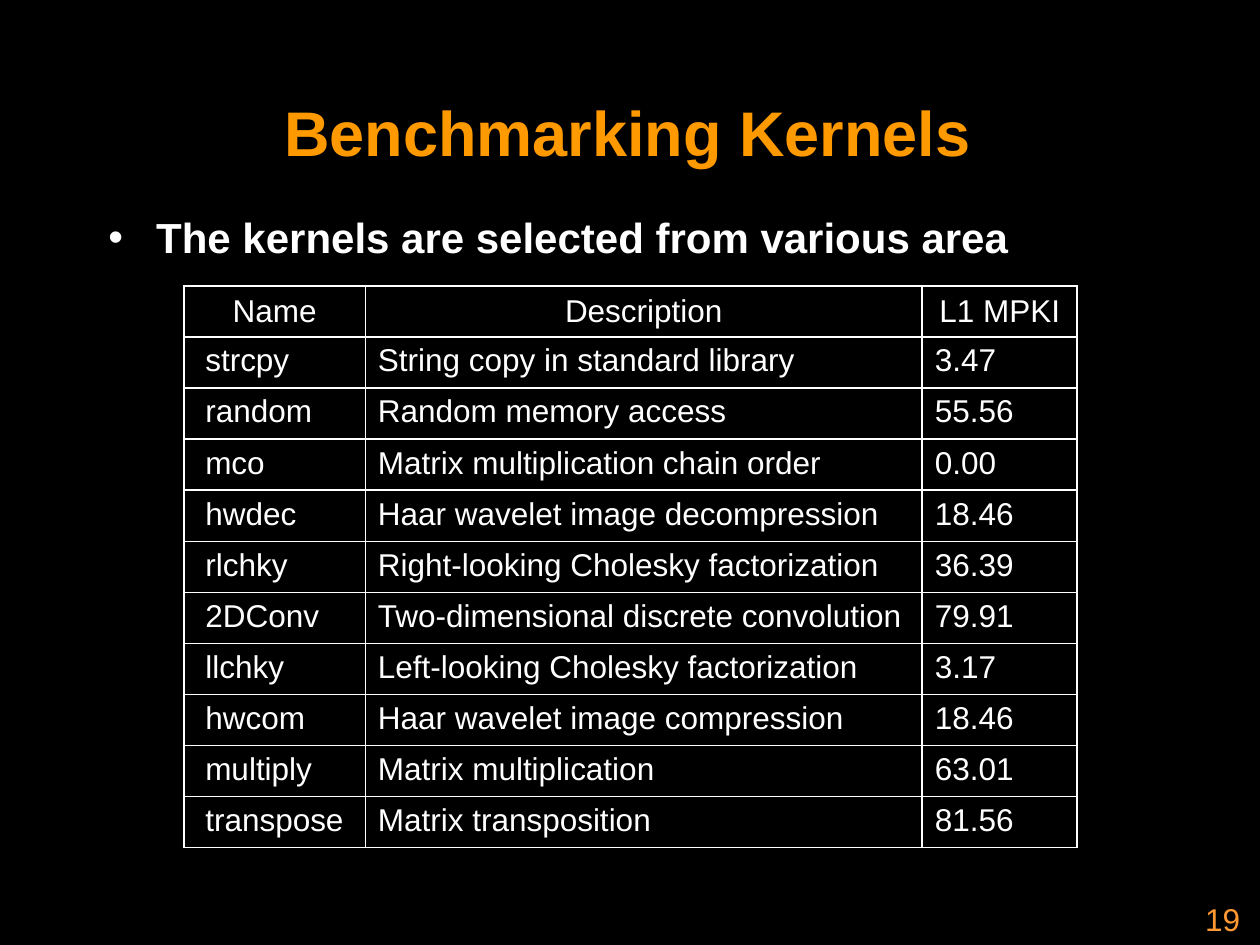
from lxml import etree
from pptx import Presentation
from pptx.dml.color import RGBColor
from pptx.enum.text import MSO_ANCHOR, PP_ALIGN
from pptx.oxml import parse_xml
from pptx.oxml.ns import nsdecls, qn
from pptx.util import Inches, Pt

MID, TOP = MSO_ANCHOR.MIDDLE, MSO_ANCHOR.TOP
LEFT, MIDST, RIGHT = PP_ALIGN.LEFT, PP_ALIGN.CENTER, PP_ALIGN.RIGHT
BLACK = RGBColor(0, 0, 0)
WHITE = RGBColor(255, 255, 255)
GOLD = RGBColor(255, 153, 0)
AMBER = RGBColor(255, 153, 51)
WIDTHS = [1.44, 4.42, 1.23]
ROW = 0.4055
ROWS = [
    ("Name", "Description", "L1 MPKI"),
    ("strcpy", "String copy in standard library", "3.47"),
    ("random", "Random memory access", "55.56"),
    ("mco", "Matrix multiplication chain order", "0.00"),
    ("hwdec", "Haar wavelet image decompression", "18.46"),
    ("rlchky", "Right-looking Cholesky factorization", "36.39"),
    ("2DConv", "Two-dimensional discrete convolution", "79.91"),
    ("llchky", "Left-looking Cholesky factorization", "3.17"),
    ("hwcom", "Haar wavelet image compression", "18.46"),
    ("multiply", "Matrix multiplication", "63.01"),
    ("transpose", "Matrix transposition", "81.56"),
]


def write(frame, text, size, color, align, bold=False):
    frame.word_wrap = True
    para = frame.paragraphs[0]
    para.text, para.alignment = text, align
    font = para.font
    font.name, font.size, font.bold = "Arial", Pt(size), bold
    font.color.rgb = color
    return para


def place(shape, *box):
    shape.left, shape.top, shape.width, shape.height = map(Inches, box)


deck = Presentation()
deck.slide_width, deck.slide_height = Inches(10), Inches(7.5)
slide = deck.slides.add_slide(deck.slide_layouts[1])
slide.background.fill.solid()
slide.background.fill.fore_color.rgb = BLACK

title, body = slide.placeholders
place(title, 0.73, 0.58, 8.5, 0.93)
write(title.text_frame, "Benchmarking Kernels", 36, GOLD, MIDST, True)
title.text_frame.vertical_anchor = MID

place(body, 0.76, 1.63, 8.5, 5.39)
item = write(body.text_frame, "The kernels are selected from various area",
             24, WHITE, LEFT, True)
props = item._p.get_or_add_pPr()
props.set("marL", str(Inches(0.38)))
props.set("indent", str(-Inches(0.38)))
etree.SubElement(props, qn("a:buChar")).set("char", "•")
props.append(props.find(qn("a:defRPr")))

grid = slide.shapes.add_table(
    len(ROWS), len(WIDTHS), Inches(1.46), Inches(2.27),
    Inches(sum(WIDTHS)), Inches(ROW * len(ROWS))).table
grid.first_row = grid.horz_banding = False
for col, width in zip(grid.columns, WIDTHS):
    col.width = Inches(width)
for r, texts in enumerate(ROWS):
    grid.rows[r].height = Inches(ROW)
    for c, text in enumerate(texts):
        cell = grid.cell(r, c)
        head = r == 0
        write(cell.text_frame, text, 18, WHITE, MIDST if head else LEFT)
        cell.vertical_anchor = MID if head else TOP
        if c == 0 and not head:
            cell.margin_left = Inches(0.17)
        tag = cell._tc.get_or_add_tcPr()
        for side in "LRTB":
            tag.append(parse_xml(
                f'<a:ln{side} {nsdecls("a")} w="{Pt(1)}"><a:solidFill>'
                f'<a:srgbClr val="{WHITE}"/></a:solidFill></a:ln{side}>'))
        cell.fill.background()

page = slide.shapes.add_textbox(0, 0, 0, 0)
place(page, 7.86, 7.09, 2.08, 0.5)
write(page.text_frame, "19", 18, AMBER, RIGHT)

deck.save("out.pptx")
